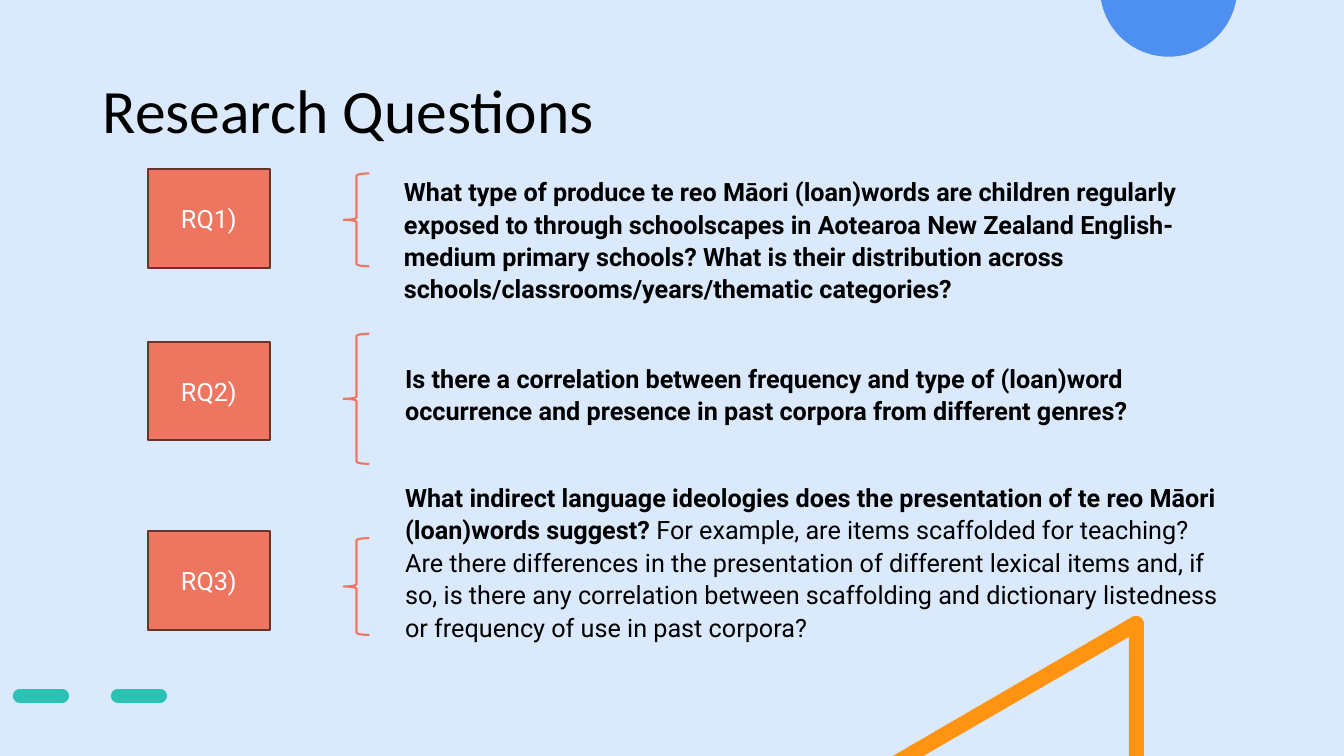
"""Build the research questions slide."""
import math

import pptx
import pptx.dml.color
import pptx.enum.dml
import pptx.enum.shapes
import pptx.enum.text
import pptx.oxml.ns
import pptx.util
from lxml import etree

Cm = pptx.util.Cm
Pt = pptx.util.Pt
Kind = pptx.enum.shapes.MSO_SHAPE
Align = pptx.enum.text.PP_ALIGN
Anchor = pptx.enum.text.MSO_ANCHOR

HUES = {
    "sky": "DBE9FC", "blue": "4D90EF", "orange": "FF9413", "teal": "2BC2B4",
    "coral": "EE7660", "rust": "68342A", "black": "000000", "white": "FFFFFF",
}

ROWS = [
    {"name": "RQ1)", "box": 4.27, "brace": (4.37, 2.34),
     "text": (9.93, 4.27, 21.95, 3.9),
     "runs": [("What type of produce te reo Māori (loan)words are children regularly "
               "exposed to through schoolscapes in Aotearoa New Zealand English-medium "
               "primary schools? What is their distribution across "
               "schools/classrooms/years/thematic categories?", True)]},
    {"name": "RQ2)", "box": 8.61, "brace": (8.41, 3.28),
     "text": (9.96, 8.97, 21.06, 2.2),
     "runs": [("Is there a correlation between frequency and type of (loan)word "
               "occurrence and presence in past corpora from different genres?", True)]},
    {"name": "RQ3)", "box": 13.39, "brace": (13.56, 2.44),
     "text": (9.96, 11.98, 21.06, 4.6),
     "runs": [("What indirect language ideologies does the presentation of te reo Māori "
               "(loan)words suggest? ", True),
              ("For example, are items scaffolded for teaching? Are there differences in "
               "the presentation of different lexical items and, if so, is there any "
               "correlation between scaffolding and dictionary listedness or frequency "
               "of use in past corpora?", False)]},
]


class Board:
    def __init__(self, slide, font="Roboto", size=18):
        self.slide = slide
        self.font = font
        self.size = size

    def hue(self, name):
        return pptx.dml.color.RGBColor.from_string(HUES[name])

    def back(self, name):
        fill = self.slide.background.fill
        fill.solid()
        fill.fore_color.rgb = self.hue(name)

    def paint(self, shape, fill=None, line=None):
        shape.shadow.inherit = False
        if fill:
            shape.fill.solid()
            shape.fill.fore_color.rgb = self.hue(fill)
        else:
            shape.fill.background()
        if line:
            shape.line.color.rgb = self.hue(line)
            shape.line.width = Pt(1.5)
        else:
            shape.line.fill.background()

    def add_runs(self, para, runs, hue, font=None, size=None):
        for words, bold in runs:
            run = para.add_run()
            run.text = words
            run.font.name = font or self.font
            run.font.size = Pt(size or self.size)
            run.font.bold = bold
            run.font.color.rgb = self.hue(hue)

    def text(self, place, runs, space, font=None, size=None, anchor=Anchor.TOP):
        frame = self.slide.shapes.add_textbox(*map(Cm, place)).text_frame
        frame.word_wrap = True
        frame.vertical_anchor = anchor
        para = frame.paragraphs[0]
        para.line_spacing = space
        self.add_runs(para, runs, "black", font, size)

    def box(self, place, label):
        shape = self.slide.shapes.add_shape(Kind.RECTANGLE, *map(Cm, place))
        self.paint(shape, "coral", "rust")
        shape.text_frame.vertical_anchor = Anchor.MIDDLE
        para = shape.text_frame.paragraphs[0]
        para.alignment = Align.CENTER
        self.add_runs(para, [(label, False)], "white")

    def brace(self, place):
        shape = self.slide.shapes.add_shape(Kind.LEFT_BRACE, *map(Cm, place))
        self.paint(shape, line="coral")

    def shape(self, points, fill):
        first, *rest = [(Cm(x), Cm(y)) for x, y in points]
        build = self.slide.shapes.build_freeform(*first)
        build.add_line_segments(rest, close=True)
        self.paint(build.convert_to_shape(), fill)

    def dash(self, left, right, top, hue):
        line = self.slide.shapes.add_connector(
            pptx.enum.shapes.MSO_CONNECTOR.STRAIGHT, *map(Cm, (left, top, right, top)))
        line.line.color.rgb = self.hue(hue)
        line.line.width = Pt(10)
        line.line.dash_style = pptx.enum.dml.MSO_LINE.DASH
        props = line.element.spPr
        props.find(pptx.oxml.ns.qn("a:ln")).set("cap", "rnd")
        etree.SubElement(props, pptx.oxml.ns.qn("a:effectLst"))


def arc(x, y, size, start, end, steps):
    turns = [math.radians(start + (end - start) * i / steps) for i in range(steps + 1)]
    return [(x + size * math.cos(t), y + size * math.sin(t)) for t in turns]


def main():
    deck = pptx.Presentation()
    deck.slide_width = Cm(33.87)
    deck.slide_height = Cm(19.05)
    board = Board(deck.slides.add_slide(deck.slide_layouts[6]))
    board.back("sky")
    board.shape(arc(29.45, -0.3, 1.73, 10, 170, 60), "blue")
    board.shape(arc(28.63, 15.72, 0.2, 0, -120, 12) + [
        (22.5, 19.05), (23.27, 19.05), (28.45, 16.05), (28.45, 19.05), (28.83, 19.05),
    ], "orange")
    board.dash(0.5, 4.95, 17.53, "teal")
    board.text((2.34, 1.02, 29.21, 3.68), [("Research Questions", False)],
               0.9, "Calibri", 44, Anchor.MIDDLE)
    for row in ROWS:
        top, height = row["brace"]
        board.text(row["text"], row["runs"], 1.07)
        board.box((3.73, row["box"], 3.07, 2.49), row["name"])
        board.brace((8.66, top, 0.65, height))
    deck.save("out.pptx")


if __name__ == "__main__":
    main()
